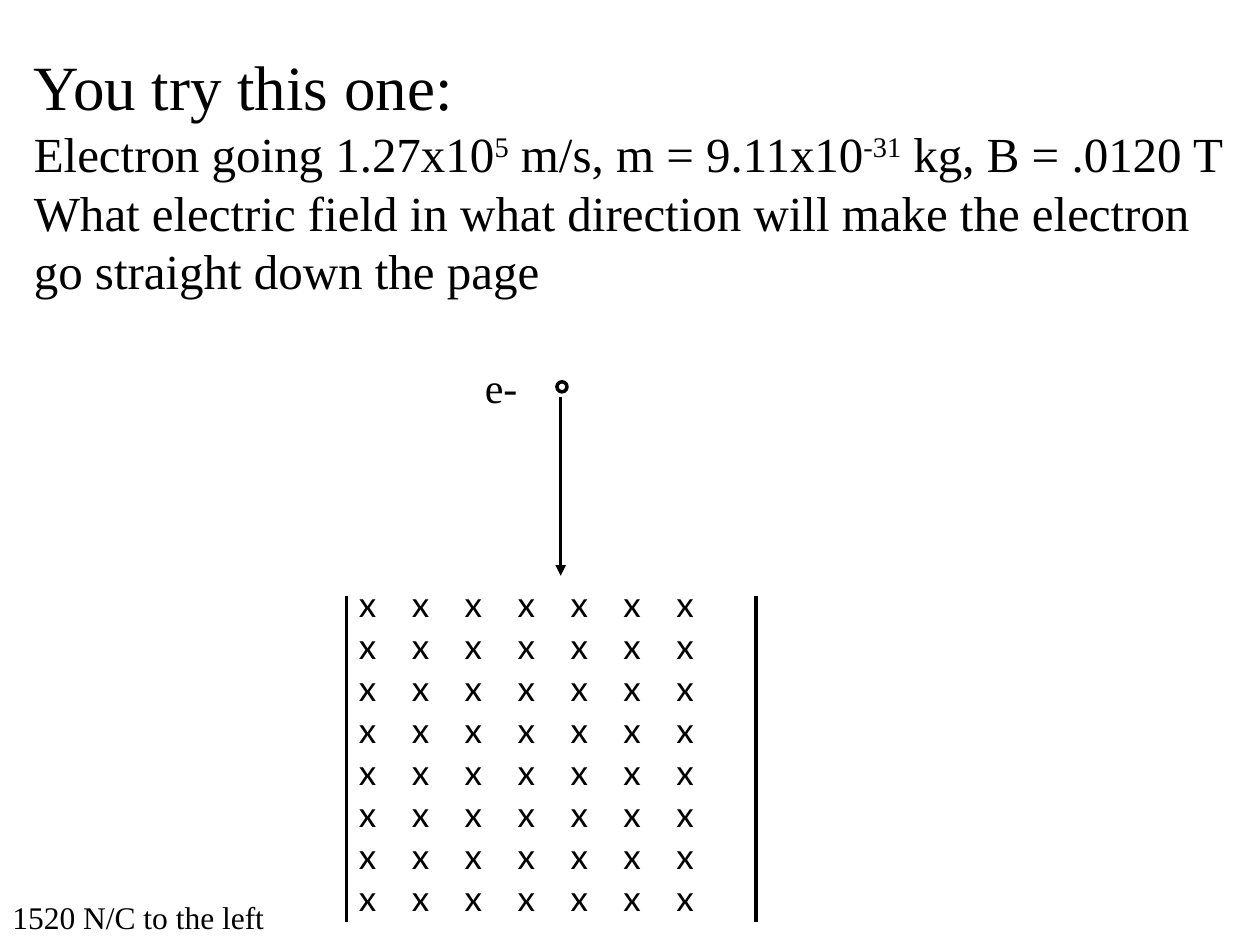
from lxml import etree
from pptx import Presentation
from pptx.dml.color import RGBColor
from pptx.enum.shapes import MSO_CONNECTOR, MSO_SHAPE
from pptx.oxml.ns import qn
from pptx.util import Inches, Pt

LINE = MSO_CONNECTOR.STRAIGHT
OVAL = MSO_SHAPE.OVAL
COLORS = {"ink": "000000"}
INK = RGBColor.from_string(COLORS["ink"])
SERIF = "Times New Roman"
ROWS, COLS, PITCH = 8, 7, 0.42

deck = Presentation()
deck.slide_width, deck.slide_height = Inches(10), Inches(7.5)
slide = deck.slides.add_slide(deck.slide_layouts[6])


def add_text(spot, lines, face=SERIF, wrap=True):
    frame = slide.shapes.add_textbox(*map(Inches, spot)).text_frame
    frame.word_wrap = wrap
    for i, (size, runs) in enumerate(lines):
        para = frame.add_paragraph() if i else frame.paragraphs[0]
        for j, words in enumerate(runs):
            run = para.add_run()
            run.text = words
            run.font.color.rgb = INK
            for key, value in {"name": face, "size": Pt(size)}.items():
                setattr(run.font, key, value)
            if j % 2:
                run._r.get_or_add_rPr().set("baseline", "30000")
    return frame


def add_line(x, top, end):
    line = slide.shapes.add_connector(LINE, Inches(x), Inches(top), Inches(x), Inches(end))
    line.line.color.rgb = INK
    line.line.width = Pt(2)
    etree.SubElement(line._element.spPr, qn("a:effectLst"))
    return line


add_text((0.17, 0.33, 9.75, 2.1), [
    (36, ["You try this one:"]),
    (28, ["Electron going 1.27x10", "5", " m/s, m = 9.11x10", "-31", " kg, B = .0120 T"]),
    (28, ["What electric field in what direction will make the electron go straight down the page"]),
])

dot = slide.shapes.add_shape(OVAL, Inches(4.42), Inches(3.03), Inches(0.08), Inches(0.08))
dot.shadow.inherit = False
dot.fill.background()
dot.line.color.rgb = INK
dot.line.width = Pt(2)

path = add_line(4.45, 3.15, 4.57)
etree.SubElement(path.line._get_or_add_ln(), qn("a:tailEnd"), type="triangle")
add_text((3.75, 2.82, 0.46, 0.5), [(24, ["e-"])], wrap=False)

field = add_text((2.75, 4.57, 3.33, 2.77), [(20, ["\t".join("x" * COLS)])] * ROWS, "Lato")
for para in field.paragraphs:
    tabs = etree.SubElement(para._p.get_or_add_pPr(), qn("a:tabLst"))
    for col in range(1, COLS):
        etree.SubElement(tabs, qn("a:tab"), pos=str(Inches(PITCH * col)), algn="l")

for x in (2.75, 6):
    add_line(x, 4.73, 7.32)

add_text((0, 7.08, 2.2, 0.4), [(18, ["1520 N/C to the left"])], wrap=False)

deck.save("out.pptx")
